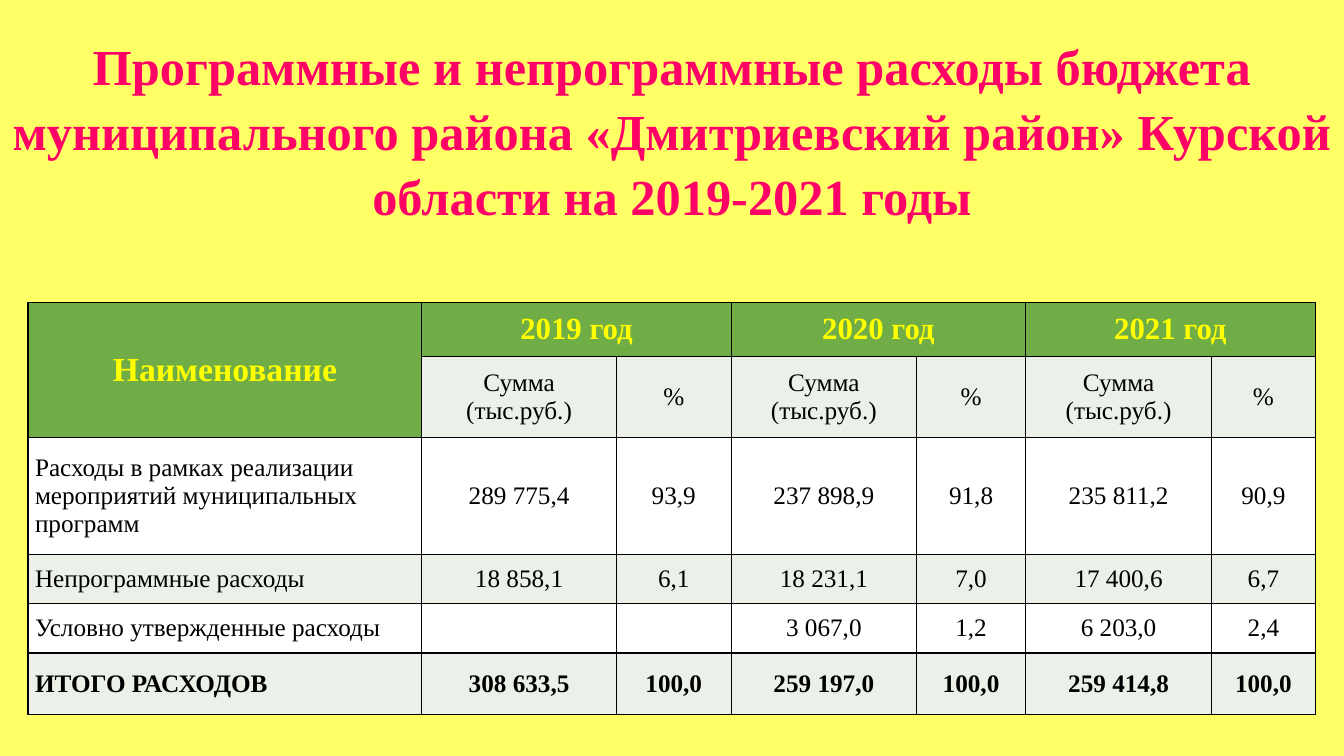
from dataclasses import dataclass

from lxml.etree import SubElement
from pptx import Presentation
from pptx.dml.color import RGBColor
from pptx.enum.text import MSO_ANCHOR, PP_ALIGN
from pptx.oxml.ns import qn
from pptx.util import Pt

TITLE = ("Программные и непрограммные расходы бюджета муниципального района "
         "«Дмитриевский район» Курской области на 2019-2021 годы")
NAME_HEADING = "Наименование"
YEARS = ["2019 год", "2020 год", "2021 год"]
MEASURES = ["Сумма (тыс.руб.)", "%"]
EXPENSES = [
    ("Расходы в рамках реализации мероприятий муниципальных программ",
     "289 775,4", "93,9", "237 898,9", "91,8", "235 811,2", "90,9"),
    ("Непрограммные расходы",
     "18 858,1", "6,1", "18 231,1", "7,0", "17 400,6", "6,7"),
    ("Условно утвержденные расходы",
     "", "", "3 067,0", "1,2", "6 203,0", "2,4"),
    ("ИТОГО РАСХОДОВ",
     "308 633,5", "100,0", "259 197,0", "100,0", "259 414,8", "100,0"),
]
SLIDE_SIZE = (960, 540)
TITLE_HEIGHT = 182.9
TABLE_LEFT, TABLE_TOP = 20, 216
COLUMN_WIDTHS = [281.3, 139, 82, 132.5, 77.8, 133, 73.9]
ROW_HEIGHTS = [38.6, 58, 83.5, 34.9, 35.5, 43.7]


@dataclass(frozen=True)
class Theme:
    """Fonts, type sizes and colours of the slide."""
    font: str = "Times New Roman"
    title_size: int = 36
    name_size: int = 24
    year_size: int = 22
    body_size: int = 18
    background: str = "FFFF66"
    title: str = "FF0066"
    heading: str = "FFFF00"
    heading_fill: str = "70AD47"
    band: str = "EBF1E9"
    plain: str = "FFFFFF"
    ink: str = "000000"


THEME = Theme()


def paint(fill, color):
    """Make a fill solid."""
    fill.solid()
    fill.fore_color.rgb = RGBColor.from_string(color)


def add_line(properties, tag, width):
    """Append a solid line element in the ink colour."""
    line = SubElement(properties, qn(tag), w=str(Pt(width)))
    solid = SubElement(line, qn("a:solidFill"))
    SubElement(solid, qn("a:srgbClr"), val=THEME.ink)
    return line


def write(frame, text, size, color, bold, align):
    """Put one run in the first paragraph of a text frame."""
    paragraph = frame.paragraphs[0]
    paragraph.alignment = align
    run = paragraph.add_run()
    run.text = text
    run.font.name = THEME.font
    run.font.size = Pt(size)
    run.font.bold = bold
    run.font.color.rgb = RGBColor.from_string(color)
    return paragraph, run


def fill_cell(cell, text, fill, size=THEME.body_size, color=THEME.ink,
              bold=False, align=PP_ALIGN.CENTER):
    """Write and colour one table cell."""
    cell.vertical_anchor = MSO_ANCHOR.MIDDLE
    if text:
        write(cell.text_frame, text, size, color, bold, align)
    paint(cell.fill, fill)


def add_title(slide):
    """Add the outlined title across the top."""
    title = slide.shapes.add_textbox(0, 0, Pt(SLIDE_SIZE[0]), Pt(TITLE_HEIGHT))
    frame = title.text_frame
    frame.word_wrap = True
    frame.vertical_anchor = MSO_ANCHOR.MIDDLE
    paragraph, run = write(frame, TITLE, THEME.title_size, THEME.title,
                           True, PP_ALIGN.CENTER)
    paragraph.line_spacing = 1.08
    properties = run.font._element
    properties.insert(0, add_line(properties, "a:ln", 0.75))


def add_expenses(slide):
    """Add the table of expenses by year."""
    table = slide.shapes.add_table(
        len(ROW_HEIGHTS), len(COLUMN_WIDTHS), Pt(TABLE_LEFT), Pt(TABLE_TOP),
        Pt(sum(COLUMN_WIDTHS)), Pt(sum(ROW_HEIGHTS))).table
    table.first_row = table.horz_banding = False
    for column, width in zip(table.columns, COLUMN_WIDTHS):
        column.width = Pt(width)
    for row, height in zip(table.rows, ROW_HEIGHTS):
        row.height = Pt(height)

    for cell in table.iter_cells():
        properties = cell._tc.get_or_add_tcPr()
        for side in ("a:lnL", "a:lnR", "a:lnT", "a:lnB"):
            add_line(properties, side, 1)

    table.cell(0, 0).merge(table.cell(1, 0))
    fill_cell(table.cell(0, 0), NAME_HEADING, THEME.heading_fill,
              THEME.name_size, THEME.heading, True)
    for index, year in enumerate(YEARS):
        first = 1 + index * len(MEASURES)
        table.cell(0, first).merge(table.cell(0, first + len(MEASURES) - 1))
        fill_cell(table.cell(0, first), year, THEME.heading_fill,
                  THEME.year_size, THEME.heading, True)
        for offset, measure in enumerate(MEASURES):
            fill_cell(table.cell(1, first + offset), measure, THEME.band)

    for index, expense in enumerate(EXPENSES):
        for column, text in enumerate(expense):
            cell = table.cell(2 + index, column)
            cell.margin_left = cell.margin_right = Pt(5)
            cell.margin_top = cell.margin_bottom = 0
            fill_cell(cell, text, THEME.band if index % 2 else THEME.plain,
                      bold=expense is EXPENSES[-1],
                      align=PP_ALIGN.CENTER if column else PP_ALIGN.LEFT)


def main():
    """Build and save the slide."""
    deck = Presentation()
    deck.slide_width, deck.slide_height = map(Pt, SLIDE_SIZE)
    slide = deck.slides.add_slide(deck.slide_layouts[6])
    paint(slide.background.fill, THEME.background)
    add_title(slide)
    add_expenses(slide)
    deck.save("out.pptx")


if __name__ == "__main__":
    main()
